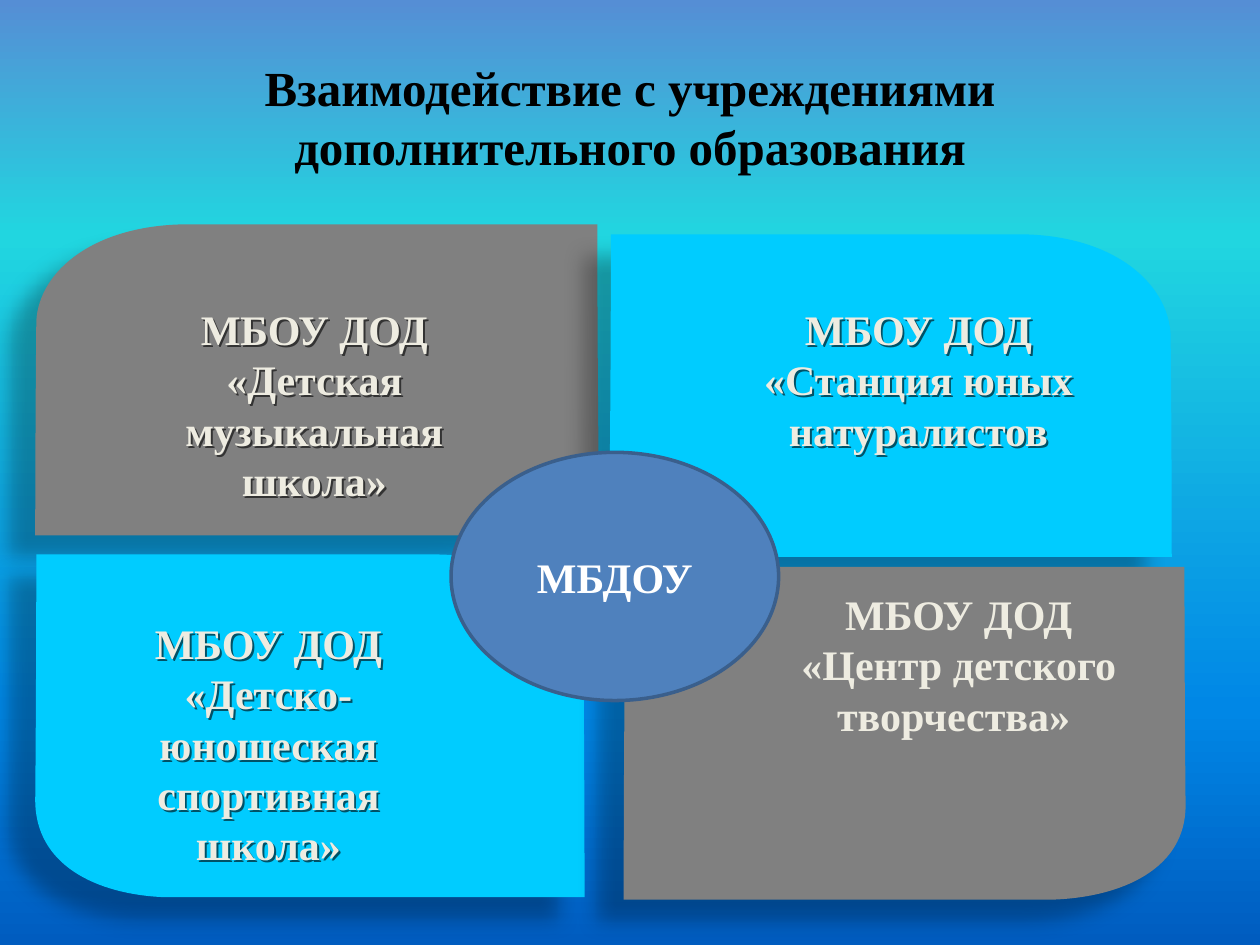
import pptx
import pptx.dml.color
import pptx.enum.shapes
import pptx.enum.text
import pptx.oxml
import pptx.oxml.ns
import pptx.util

SLIDE_WIDTH = pptx.util.Inches(10)
SLIDE_HEIGHT = pptx.util.Inches(7.5)
FONT = "Times New Roman"
GRAY, CYAN, CREAM = "808080", "00CCFF", "EEECE1"
NAMESPACE = pptx.oxml.ns.nsdecls("a")

BACKGROUND_STOPS = [(0, "558ED5"), (25, "21D6E0"), (75, "0087E6"), (100, "005CBF")]

# Petal outline on a grid of 1000 by 1000: two control points and an end per curve
GRID = 1000
PETAL_START = (765, 1000)
PETAL_CURVES = [
    ((383, 1000), (0, 1000), (0, 1000)),
    ((0, 1000), (0, 655), (2, 310)),
    ((7, 150), (105, 0), (273, 0)),
    ((635, 0), (998, 0), (998, 0)),
    ((998, 0), (998, 358), (1000, 717)),
    ((1000, 907), (888, 992), PETAL_START),
]

# Boxes are left, top, width, height in percent of the slide
PETALS = [
    ((2.8, 23.73, 44.7, 32.93), GRAY, False),
    ((48.4, 24.8, 44.6, 34.13), CYAN, True),
    ((2.8, 58.67, 43.6, 36.27), CYAN, True),
    ((49.5, 60, 44.6, 35.2), GRAY, False),
]
LABELS = [
    ((9.6, 31.47, 30.7, 22.93), "МБОУ ДОД «Детская музыкальная школа»", True),
    ((61.8, 61.6, 28.6, 17.47), "МБОУ ДОД «Центр детского творчества» ", False),
    ((5.9, 64.67, 30.8, 28.27), "МБОУ ДОД «Детско-юношеская спортивная школа»", True),
    ((58.6, 31.47, 28.6, 17.47), "МБОУ ДОД «Станция юных натуралистов", True),
]


def color(hex_string):
    return pptx.dml.color.RGBColor.from_string(hex_string)


def place(box):
    """Turn percentages of the slide into lengths."""
    sides = (SLIDE_WIDTH, SLIDE_HEIGHT) * 2
    return [pptx.util.Emu(round(share * side / 100)) for share, side in zip(box, sides)]


def add_shadow(shape, blur, distance, angle, opacity):
    shape._element.spPr.append(pptx.oxml.parse_xml(
        f'<a:effectLst {NAMESPACE}><a:outerShdw blurRad="{pptx.util.Pt(blur)}" '
        f'dist="{pptx.util.Pt(distance)}" dir="{angle * 60000}" algn="tl" rotWithShape="0">'
        f'<a:srgbClr val="000000"><a:alpha val="{opacity * 1000}"/></a:srgbClr>'
        f'</a:outerShdw></a:effectLst>'))


def write_text(shape, text, size, font_color):
    text_frame = shape.text_frame
    text_frame.word_wrap = True
    text_frame.text = text
    paragraph = text_frame.paragraphs[0]
    paragraph.alignment = pptx.enum.text.PP_ALIGN.CENTER
    font = paragraph.runs[0].font
    font.name, font.size, font.bold = FONT, pptx.util.Pt(size), True
    font.color.rgb = color(font_color)


def paint_background(slide):
    fill = slide.background.fill
    fill.gradient()
    fill.gradient_angle = 270
    stops = slide.background._cSld.find(".//" + pptx.oxml.ns.qn("a:gsLst"))
    for stop in list(stops):
        stops.remove(stop)
    for position, hex_string in BACKGROUND_STOPS:
        stops.append(pptx.oxml.parse_xml(
            f'<a:gs {NAMESPACE} pos="{position * 1000}"><a:srgbClr val="{hex_string}"/></a:gs>'))


def add_title(slide, text):
    title = slide.shapes.title
    title.left, title.top, title.width, title.height = place((5, 4, 90, 16.67))
    write_text(title, text, 28, "000000")
    title.text_frame.vertical_anchor = pptx.enum.text.MSO_ANCHOR.MIDDLE


def add_petal(shapes, box, fill_color, flipped):
    left, top, width, height = place(box)

    def turn(point):
        return (GRID - point[0] if flipped else point[0], point[1])

    builder = shapes.build_freeform(*turn(PETAL_START), scale=(width / GRID, height / GRID))
    builder.add_line_segments([turn(curve[-1]) for curve in PETAL_CURVES], close=True)
    petal = builder.convert_to_shape(left, top)
    bend_segments(petal, [[turn(point) for point in curve] for curve in PETAL_CURVES])
    petal.fill.solid()
    petal.fill.fore_color.rgb = color(fill_color)
    petal.line.fill.background()
    add_shadow(petal, 11.8, 19.7, 141, 28)


def bend_segments(shape, curves):
    """Replace the straight segments of a freeform by Bezier curves."""
    segments = list(shape._element.iter(pptx.oxml.ns.qn("a:lnTo")))
    for segment, curve in zip(segments, curves):
        points = "".join(f'<a:pt x="{x}" y="{y}"/>' for x, y in curve)
        segment.getparent().replace(segment, pptx.oxml.parse_xml(
            f'<a:cubicBezTo {NAMESPACE}>{points}</a:cubicBezTo>'))


def add_label(shapes, box, text, shadowed):
    label = shapes.add_textbox(*place(box))
    write_text(label, text, 24, CREAM)
    if shadowed:
        add_shadow(label, 0, 1.6, 45, 60)


def add_center(shapes, box, text):
    ellipse = shapes.add_shape(pptx.enum.shapes.MSO_SHAPE.OVAL, *place(box))
    ellipse.shadow.inherit = False
    ellipse.fill.solid()
    ellipse.fill.fore_color.rgb = color("4F81BD")
    ellipse.line.color.rgb = color("3A5F8C")
    ellipse.line.width = pptx.util.Pt(2)
    write_text(ellipse, text, 24, "FFFFFF")
    ellipse.text_frame.vertical_anchor = pptx.enum.text.MSO_ANCHOR.MIDDLE


def main():
    presentation = pptx.Presentation()
    presentation.slide_width, presentation.slide_height = SLIDE_WIDTH, SLIDE_HEIGHT
    slide = presentation.slides.add_slide(presentation.slide_layouts.get_by_name("Title Only"))
    paint_background(slide)
    add_title(slide, "Взаимодействие с учреждениями дополнительного образования")
    diagram = slide.shapes.add_group_shape().shapes
    for petal in PETALS:
        add_petal(diagram, *petal)
    for label in LABELS:
        add_label(diagram, *label)
    add_center(diagram, (35.8, 47.87, 26, 26.27), "МБДОУ")
    presentation.save("out.pptx")


if __name__ == "__main__":
    main()
